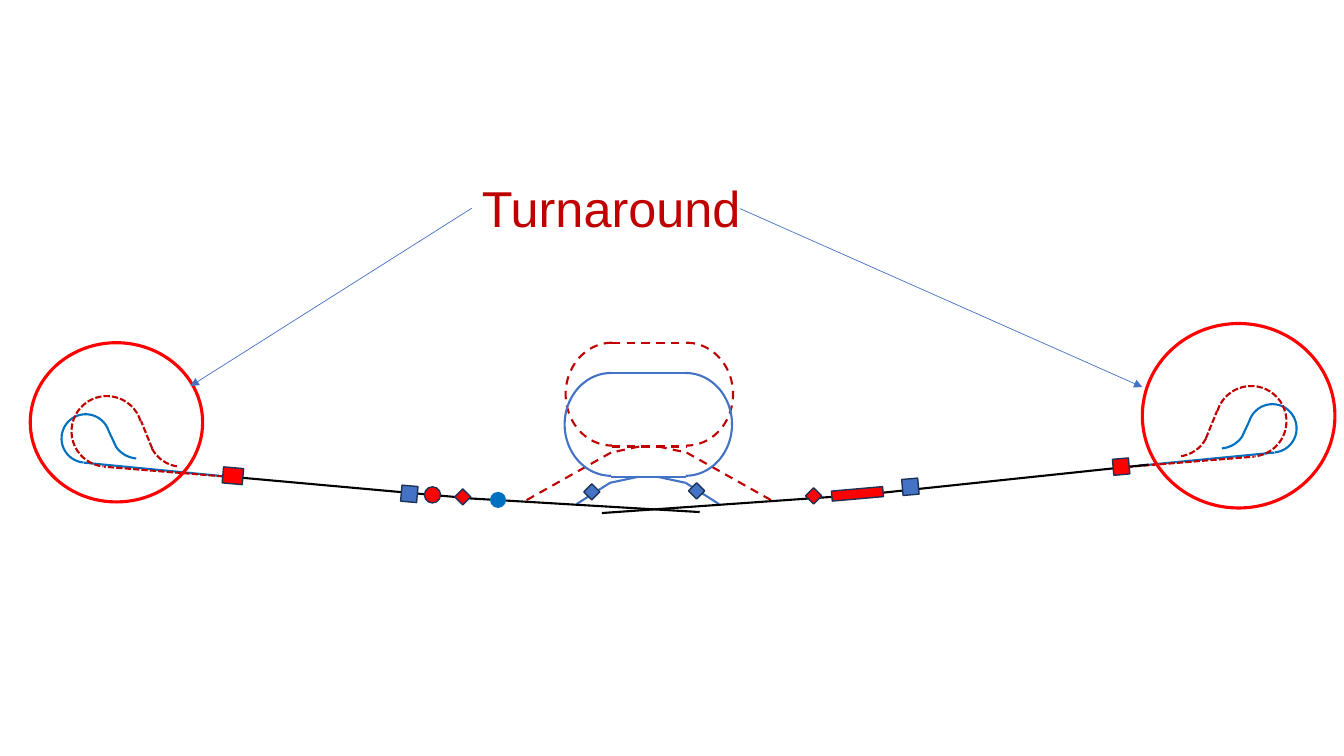
from dataclasses import dataclass
from typing import Optional

from lxml.etree import SubElement
from pptx import Presentation
from pptx.dml.color import RGBColor
from pptx.enum.dml import MSO_LINE
from pptx.enum.shapes import MSO_CONNECTOR, MSO_SHAPE as Kind
from pptx.enum.text import MSO_AUTO_SIZE
from pptx.oxml.ns import qn
from pptx.util import Pt

PX = 9144
BLACK = RGBColor(0x00, 0x00, 0x00)
RED = RGBColor(0xFF, 0x00, 0x00)
DARK_RED = RGBColor(0xC0, 0x00, 0x00)
BLUE = RGBColor(0x44, 0x72, 0xC4)
BRIGHT_BLUE = RGBColor(0x00, 0x70, 0xC0)
NAVY = RGBColor(0x1E, 0x32, 0x56)

MIRROR_SUM = 1347
MIRROR_DROP = 10
LOOP_ANGLES = (121.039, 53.565)
EXIT_ANGLES = (19.671, 53.565)
HALF_ANGLES = (107.936, 0)


@dataclass(frozen=True)
class Pen:
    color: RGBColor
    width: float = 1.5
    dash: Optional[MSO_LINE] = None


@dataclass(frozen=True)
class Shape:
    kind: Kind
    left: int
    top: int
    width: int
    height: int
    pen: Optional[Pen] = None
    fill: Optional[RGBColor] = None
    turn: int = 0
    flip: bool = False
    angles: tuple[float, ...] = ()


@dataclass(frozen=True)
class Line:
    x1: int
    y1: int
    x2: int
    y2: int
    pen: Pen
    arrow: bool = False


@dataclass(frozen=True)
class Oval:
    left: int
    top: int
    pen: Pen
    axis_sum: int
    ramp: tuple[tuple[int, int], ...]


OUTLINE = Pen(NAVY, 1)
TRACK = Pen(BLACK)
HALO = Pen(RED, 2.25)
POINTER = Pen(BLUE, 0.5)
INNER = Pen(BRIGHT_BLUE)
OUTER = Pen(DARK_RED, dash=MSO_LINE.SQUARE_DOT)

TURNAROUND = [
    Shape(Kind.ARC, 1238, 401, 48, 48, INNER, turn=355, angles=LOOP_ANGLES),
    Shape(Kind.ARC, 1183, 397, 53, 48, INNER, turn=355, angles=EXIT_ANGLES),
    Line(1232, 433, 1239, 418, INNER),
    Line(1130, 462, 1264, 449, INNER),
    Shape(Kind.ARC, 1206, 383, 70, 70, OUTER, turn=355, angles=LOOP_ANGLES),
    Shape(Kind.ARC, 1133, 386, 67, 67, OUTER, turn=355, angles=EXIT_ANGLES),
    Line(1196, 435, 1207, 408, OUTER),
    Line(1109, 464, 1244, 453, OUTER),
]
OVALS = [
    Oval(607, 340, Pen(DARK_RED, dash=MSO_LINE.DASH), 1287,
         ((634, 443), (606, 449), (519, 498))),
    Oval(606, 370, Pen(BLUE), 1285, ((633, 473), (605, 479), (572, 500))),
]
TRACKS = [
    Line(458, 494, 694, 508, TRACK),
    Line(597, 509, 839, 492, TRACK),
    Line(864, 490, 1139, 461, TRACK),
    Line(462, 494, 240, 474, TRACK),
]
MARKERS = [
    Shape(Kind.RECTANGLE, 398, 482, 16, 16, OUTLINE, BLUE, 5),
    Shape(Kind.RECTANGLE, 221, 464, 20, 16, OUTLINE, RED, 5),
    Shape(Kind.RECTANGLE, 895, 475, 16, 16, OUTLINE, BLUE, 355),
    Shape(Kind.RECTANGLE, 1104, 455, 16, 16, OUTLINE, RED, 355),
    Shape(Kind.OVAL, 486, 488, 16, 16, fill=BRIGHT_BLUE),
    Shape(Kind.OVAL, 421, 483, 16, 16, OUTLINE, RED),
    Shape(Kind.RECTANGLE, 825, 485, 51, 10, OUTLINE, RED, 355),
    Shape(Kind.DIAMOND, 579, 480, 16, 16, OUTLINE, BLUE),
    Shape(Kind.DIAMOND, 683, 479, 16, 16, OUTLINE, BLUE),
    Shape(Kind.DIAMOND, 451, 485, 16, 16, OUTLINE, RED),
    Shape(Kind.DIAMOND, 799, 484, 16, 16, OUTLINE, RED),
    Shape(Kind.OVAL, 30, 340, 171, 158, HALO),
    Shape(Kind.OVAL, 1133, 321, 191, 183, HALO),
]


def mirrored(part):
    """Return the part reflected to the left end of the track."""
    if isinstance(part, Line):
        return Line(MIRROR_SUM - part.x1, part.y1 + MIRROR_DROP,
                    MIRROR_SUM - part.x2, part.y2 + MIRROR_DROP, part.pen)
    return Shape(part.kind, MIRROR_SUM - part.left - part.width, part.top + MIRROR_DROP,
                 part.width, part.height, part.pen, part.fill,
                 360 - part.turn, True, part.angles)


def oval_parts(oval: Oval) -> list:
    """Return the arcs, straights and both ramps of an oval."""
    left, top, pen = oval.left, oval.top, oval.pen
    parts = [Shape(Kind.ARC, left + shift, top + 5, 102, 92, pen, turn=turn,
                   flip=flip, angles=HALF_ANGLES)
             for shift, turn, flip in ((23, 90, False), (-51, 270, True))]
    parts += [Line(left, y, left + 74, y, pen) for y in (top, top + 103)]
    right_ramp = tuple((oval.axis_sum - x, y) for x, y in oval.ramp)
    for ramp in (oval.ramp, right_ramp):
        parts += [Line(*start, *end, pen) for start, end in zip(ramp, ramp[1:])]
    return parts


def apply_pen(line, pen: Optional[Pen]) -> None:
    """Give a line its colour, width and dash."""
    if pen is None:
        line.fill.background()
        return
    line.color.rgb = pen.color
    for name, value in {"width": Pt(pen.width), "dash_style": pen.dash}.items():
        setattr(line, name, value)


def draw_shape(page, part: Shape) -> None:
    """Draw one preset shape."""
    box = page.shapes.add_shape(part.kind, part.left * PX, part.top * PX,
                                part.width * PX, part.height * PX)
    box.shadow.inherit = False
    box.rotation = part.turn
    for index, angle in enumerate(part.angles):
        box.adjustments[index] = angle
    if part.flip:
        box._element.spPr.find(qn("a:xfrm")).set("flipH", "1")
    if part.fill is None:
        box.fill.background()
    else:
        box.fill.solid()
        box.fill.fore_color.rgb = part.fill
    apply_pen(box.line, part.pen)


def draw_line(page, part: Line):
    """Draw one straight line and return its connector."""
    connector = page.shapes.add_connector(
        MSO_CONNECTOR.STRAIGHT, part.x1 * PX, part.y1 * PX, part.x2 * PX, part.y2 * PX)
    apply_pen(connector.line, part.pen)
    properties = connector._element.spPr
    if part.arrow:
        SubElement(properties.find(qn("a:ln")), qn("a:tailEnd"), type="triangle")
    SubElement(properties, qn("a:effectLst"))
    return connector


def draw_label(page):
    """Draw the label and return its box."""
    box = page.shapes.add_textbox(468 * PX, 171 * PX, 279 * PX, 71 * PX)
    box.text_frame.word_wrap = False
    box.text_frame.auto_size = MSO_AUTO_SIZE.SHAPE_TO_FIT_TEXT
    span = box.text_frame.paragraphs[0].add_run()
    span.text = "Turnaround"
    for name, value in {"name": "Arial", "size": Pt(36)}.items():
        setattr(span.font, name, value)
    span.font.color.rgb = DARK_RED
    return box


def main() -> None:
    """Build the slide and save it."""
    deck = Presentation()
    deck.slide_width, deck.slide_height = 1333 * PX, 750 * PX
    page = deck.slides.add_slide(deck.slide_layouts[6])
    parts = TURNAROUND + [mirrored(part) for part in TURNAROUND]
    for oval in OVALS:
        parts += oval_parts(oval)
    for part in parts + TRACKS + MARKERS:
        (draw_line if isinstance(part, Line) else draw_shape)(page, part)
    label = draw_label(page)
    draw_line(page, Line(468, 207, 189, 383, POINTER, True)).begin_connect(label, 1)
    draw_line(page, Line(734, 207, 1133, 384, POINTER, True))
    deck.save("out.pptx")


if __name__ == "__main__":
    main()
